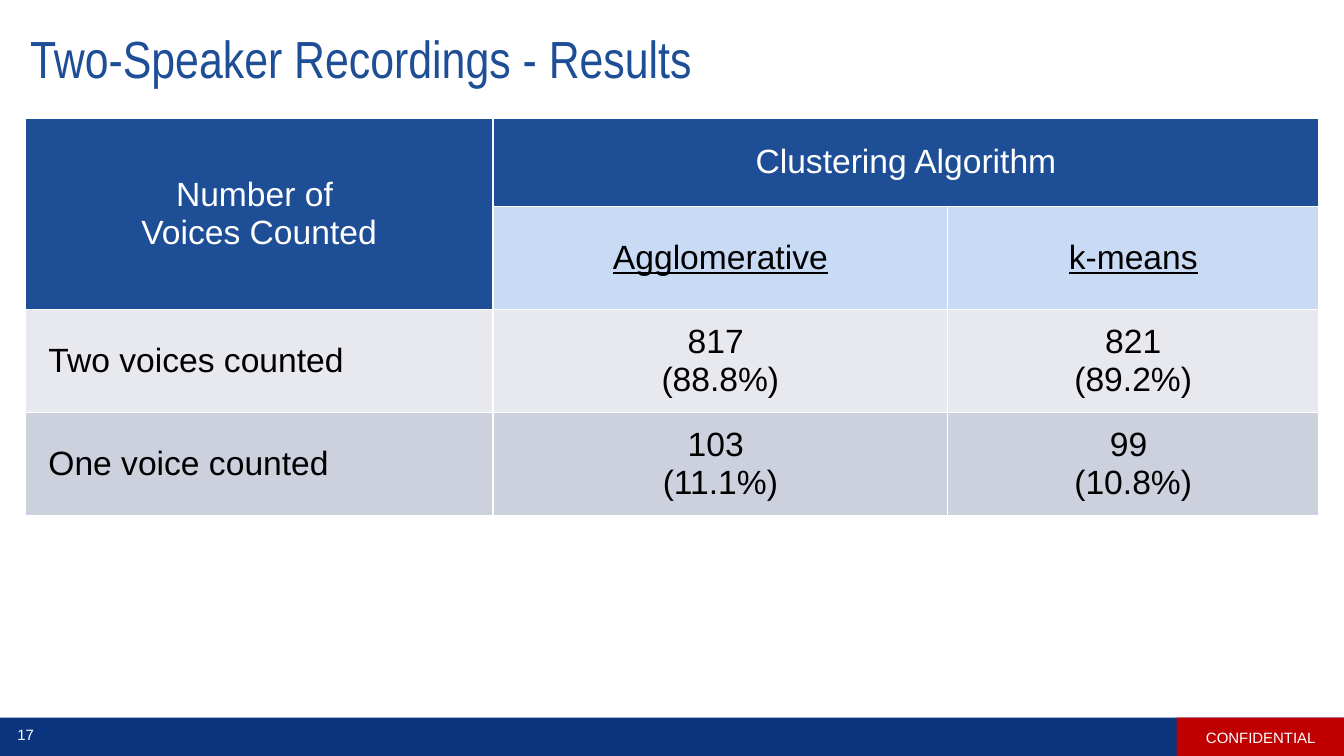
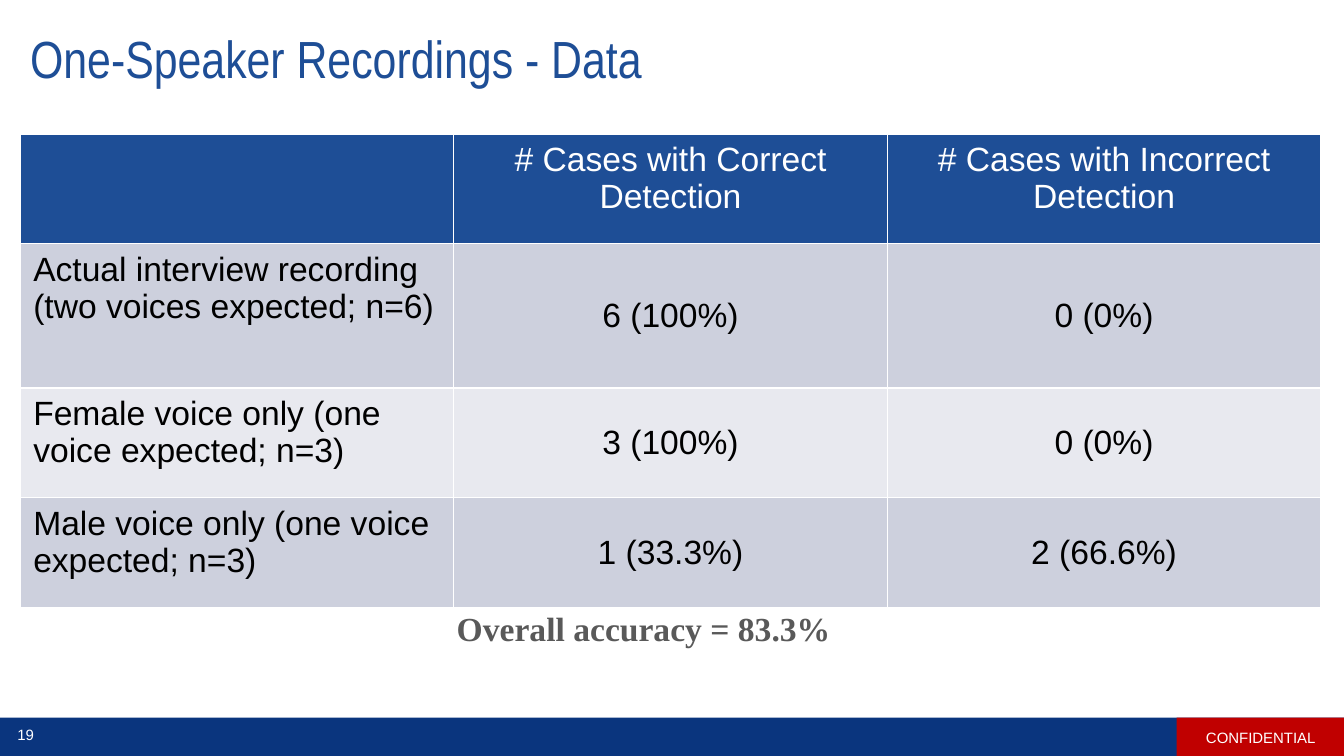
from dataclasses import dataclass

from lxml import etree
from pptx import Presentation
from pptx.dml.color import RGBColor
from pptx.enum.shapes import MSO_SHAPE
from pptx.enum.text import MSO_ANCHOR, PP_ALIGN
from pptx.oxml.ns import qn
from pptx.slide import Slide
from pptx.table import _Cell
from pptx.text.text import TextFrame
from pptx.util import Inches, Pt

RECT = MSO_SHAPE.RECTANGLE
TOP, MIDDLE = MSO_ANCHOR.TOP, MSO_ANCHOR.MIDDLE
LEFT, CENTER = PP_ALIGN.LEFT, PP_ALIGN.CENTER


@dataclass(frozen=True)
class Theme:
    navy: str = "0A357E"
    blue: str = "1E4E96"
    red: str = "C00000"
    sky: str = "C8DAF4"
    light: str = "E8E9EF"
    dark: str = "CDD0DD"
    white: str = "FFFFFF"
    black: str = "000000"
    gray: str = "595959"
    sans: str = "Arial"
    narrow: str = "Arial Narrow"
    serif: str = "Times New Roman"
    title: float = 37.3
    body: float = 24
    small: float = 10.7
    border: float = 1


THEME = Theme()


@dataclass(frozen=True)
class Box:
    left: float
    top: float
    width: float
    height: float

    def frame(self) -> tuple[int, int, int, int]:
        return (Inches(self.left), Inches(self.top),
                Inches(self.width), Inches(self.height))


@dataclass(frozen=True)
class Style:
    size: float
    color: str
    font: str = THEME.sans
    bold: bool = False
    under: bool = False
    align: PP_ALIGN = LEFT
    anchor: MSO_ANCHOR = MIDDLE
    pad: tuple[float, float, float, float] = (0.1, 0.05, 0.1, 0.05)
    space: float = 1


@dataclass(frozen=True)
class Look:
    fill: str
    color: str = THEME.black
    under: bool = False


HEAD = Look(THEME.blue, THEME.white)
SUB = Look(THEME.sky, under=True)
LIGHT = Look(THEME.light)
DARK = Look(THEME.dark)


@dataclass(frozen=True)
class Row:
    height: float
    look: Look
    texts: tuple[str, ...]


@dataclass(frozen=True)
class Grid:
    left: float
    top: float
    cols: tuple[float, ...]
    rows: tuple[Row, ...]
    pad: tuple[float, float]
    anchor: MSO_ANCHOR
    spans: tuple[tuple[int, int, int, int], ...] = ()


@dataclass(frozen=True)
class Page:
    title: str
    number: int
    grid: Grid
    note: str = ""


BAND = Box(0, 7.12, 13.33, 0.39)
BADGE = Box(11.67, 7.12, 1.67, 0.39)
TITLE = Box(0.2, 0.2, 12.89, 0.83)
NUMBER = Box(0, 7.13, 0.51, 0.32)
NOTE = Box(4.4, 5.96, 4.81, 0.54)

HEADING = Style(THEME.title, THEME.blue, THEME.narrow,
                pad=(0.1, 0.1, 0.2, 0.1), space=0.9)
FOOTER = Style(THEME.small, THEME.white, align=CENTER)
REMARK = Style(THEME.body, THEME.gray, THEME.serif, bold=True, anchor=TOP,
               pad=(0.13, 0.07, 0.13, 0.07))

PAGES = (
    Page("Two-Speaker Recordings - Results", 17, Grid(
        0.25, 1.17, (4.64, 4.51, 3.68), (
            Row(0.88, HEAD, ("Number of \nVoices Counted",
                             "Clustering Algorithm", "")),
            Row(0.97, SUB, ("", "Agglomerative", "k-means")),
            Row(1.02, LIGHT, ("Two voices counted",
                              "817 \n(88.8%)", "821\n(89.2%)")),
            Row(1.02, DARK, ("One voice counted",
                             "103 \n(11.1%)", "99 \n(10.8%)")),
        ), (0.23, 0.11), MIDDLE, ((0, 0, 1, 0), (0, 1, 0, 2)))),
    Page("One-Speaker Recordings - Data", 19, Grid(
        0.2, 1.33, (4.3,) * 3, (
            Row(1.09, HEAD, ("", "# Cases with Correct Detection",
                             "# Cases with Incorrect Detection")),
            Row(1.43, DARK, (
                "Actual interview recording (two voices expected; n=6)",
                "6 (100%)", "0 (0%)")),
            Row(1.09, LIGHT, ("Female voice only (one voice expected; n=3)",
                              "3 (100%)", "0 (0%)")),
            Row(1.09, DARK, ("Male voice only (one voice expected; n=3)",
                             "1 (33.3%)", "2 (66.6%)")),
        ), (0.13, 0.07), TOP), "Overall accuracy = 83.3%"),
)


def rgb(code: str) -> RGBColor:
    return RGBColor.from_string(code)


def write(frame: TextFrame, text: str, style: Style) -> None:
    frame.text = text
    for para in frame.paragraphs:
        para.alignment = style.align
        para.line_spacing = style.space
        for run in para.runs:
            font = run.font
            font.name = style.font
            font.size = Pt(style.size)
            font.bold = style.bold
            font.underline = style.under
            font.color.rgb = rgb(style.color)


def place(frame: TextFrame, text: str, style: Style) -> None:
    write(frame, text, style)
    frame.word_wrap = True
    frame.vertical_anchor = style.anchor
    (frame.margin_left, frame.margin_top,
     frame.margin_right, frame.margin_bottom) = map(Inches, style.pad)


def label(slide: Slide, box: Box, text: str, style: Style) -> None:
    place(slide.shapes.add_textbox(*box.frame()).text_frame, text, style)


def block(slide: Slide, box: Box, fill: str, text: str = "") -> None:
    shape = slide.shapes.add_shape(RECT, *box.frame())
    shape.shadow.inherit = False
    shape.fill.solid()
    shape.fill.fore_color.rgb = rgb(fill)
    shape.line.fill.background()
    if text:
        place(shape.text_frame, text, FOOTER)


def outline(cell: _Cell) -> None:
    props = cell._tc.get_or_add_tcPr()
    for side in ("a:lnL", "a:lnR", "a:lnT", "a:lnB"):
        line = etree.SubElement(props, qn(side), w=str(Pt(THEME.border)))
        fill = etree.SubElement(line, qn("a:solidFill"))
        etree.SubElement(fill, qn("a:srgbClr"), val=THEME.white)


def paint(cell: _Cell, text: str, look: Look, style: Style) -> None:
    outline(cell)
    cell.fill.solid()
    cell.fill.fore_color.rgb = rgb(look.fill)
    cell.vertical_anchor = style.anchor
    (cell.margin_left, cell.margin_top,
     cell.margin_right, cell.margin_bottom) = map(Inches, style.pad)
    if text:
        write(cell.text_frame, text, style)


def draw(slide: Slide, grid: Grid) -> None:
    box = Box(grid.left, grid.top, sum(grid.cols),
              sum(row.height for row in grid.rows))
    table = slide.shapes.add_table(
        len(grid.rows), len(grid.cols), *box.frame()).table
    table.first_row = False
    table.horz_banding = False
    for col, width in zip(table.columns, grid.cols):
        col.width = Inches(width)
    for r, row in enumerate(grid.rows):
        table.rows[r].height = Inches(row.height)
        look = row.look
        for c, text in enumerate(row.texts):
            head = look is HEAD
            style = Style(
                THEME.body, look.color, under=look.under,
                align=CENTER if head or c else LEFT,
                anchor=grid.anchor if head or not c else MIDDLE,
                pad=grid.pad * 2)
            paint(table.cell(r, c), text, look, style)
    for top, left, low, right in grid.spans:
        table.cell(top, left).merge(table.cell(low, right))


def build(slide: Slide, page: Page) -> None:
    block(slide, BAND, THEME.navy)
    block(slide, BADGE, THEME.red, "CONFIDENTIAL")
    label(slide, TITLE, page.title, HEADING)
    label(slide, NUMBER, str(page.number), FOOTER)
    draw(slide, page.grid)
    if page.note:
        label(slide, NOTE, page.note, REMARK)


def main() -> None:
    deck = Presentation()
    deck.slide_width = Inches(13.33)
    deck.slide_height = Inches(7.5)
    blank = deck.slide_layouts[6]
    for page in PAGES:
        build(deck.slides.add_slide(blank), page)
    deck.save("out.pptx")


if __name__ == "__main__":
    main()
